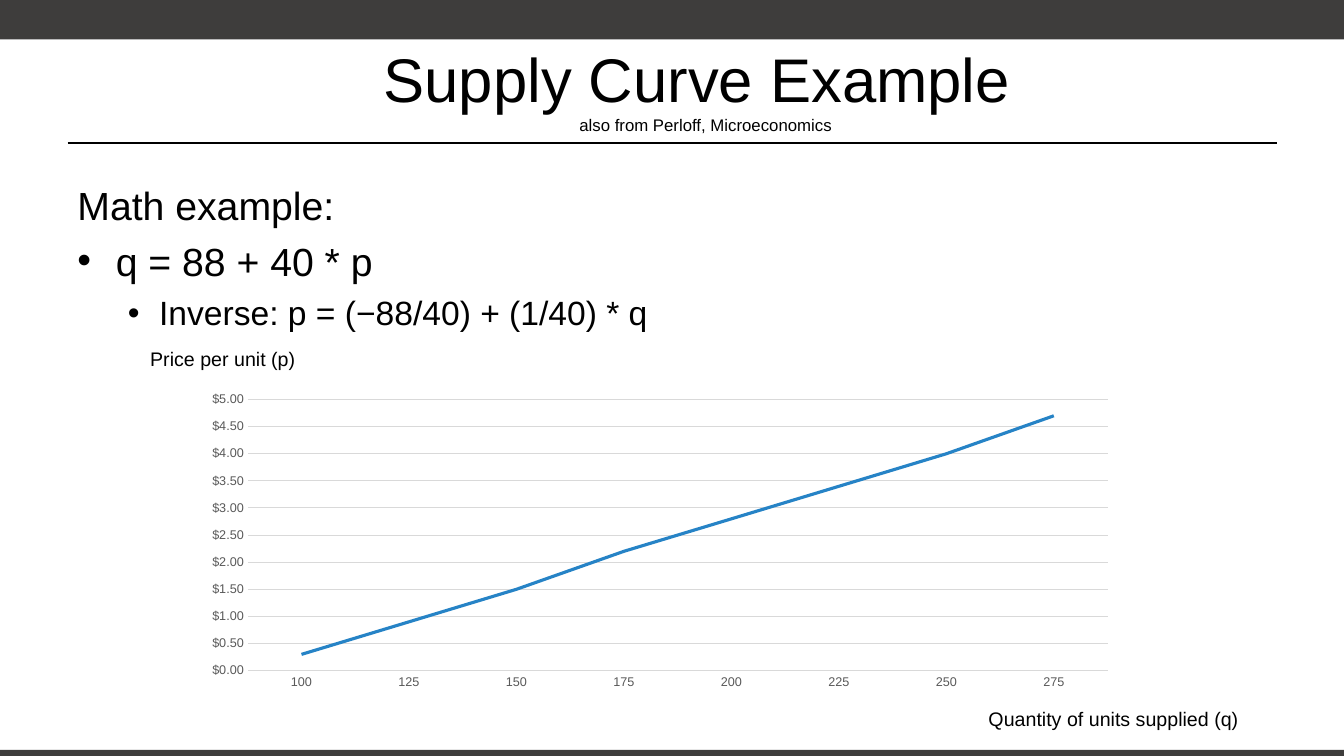
from dataclasses import dataclass

from lxml import etree
from pptx import Presentation
from pptx.chart.data import CategoryChartData
from pptx.dml.color import RGBColor
from pptx.enum.chart import XL_CHART_TYPE, XL_TICK_MARK
from pptx.enum.shapes import MSO_CONNECTOR, MSO_SHAPE
from pptx.enum.text import MSO_ANCHOR, PP_ALIGN
from pptx.oxml.ns import qn
from pptx.util import Pt

PX = 9144
FONT = "Arial"
BLACK = RGBColor(0, 0, 0)
WHITE = RGBColor(255, 255, 255)
DARK = RGBColor(0x3E, 0x3D, 0x3C)
GREY = RGBColor(0x59, 0x59, 0x59)
PALE = RGBColor(0xD9, 0xD9, 0xD9)
BLUE = RGBColor(0x26, 0x83, 0xC6)
LINE = XL_CHART_TYPE.LINE
NO_TICK = XL_TICK_MARK.NONE
RECT = MSO_SHAPE.RECTANGLE
STRAIGHT = MSO_CONNECTOR.STRAIGHT
TOP, MIDDLE = MSO_ANCHOR.TOP, MSO_ANCHOR.MIDDLE
LEFT, CENTER = PP_ALIGN.LEFT, PP_ALIGN.CENTER


@dataclass(frozen=True)
class Box:
    """A place on the slide in px, 100 to the inch."""
    left: int
    top: int
    width: int
    height: int

    def emu(self) -> tuple[int, ...]:
        """Return the place in EMU."""
        return tuple(n * PX for n in (self.left, self.top, self.width, self.height))


@dataclass(frozen=True)
class Run:
    """Words in one size."""
    words: str
    size: int


@dataclass(frozen=True)
class Para:
    """A paragraph of runs, one to a line, with an optional bullet."""
    runs: tuple[Run, ...]
    before: int = 0
    level: int = 0
    margin: int = 0
    hang: int = 0


@dataclass(frozen=True)
class Text:
    """A text box."""
    box: Box
    paras: tuple[Para, ...]
    align: PP_ALIGN = CENTER
    anchor: MSO_ANCHOR = TOP
    wrap: bool = True


BARS = (Box(0, 0, 1333, 39), Box(0, 744, 1333, 6))
RULE = Box(67, 142, 1200, 0)
CHART = Box(192, 383, 925, 307)
UNITS = range(100, 300, 25)
PRICES = (0.3, 0.9, 1.5, 2.2, 2.8, 3.4, 4, 4.7)
TEXTS = (
    Text(Box(67, 175, 1200, 150), (
        Para((Run("Math example:", 28),), 6),
        Para((Run("q = 88 + 40 * p", 28),), 6, 0, 38, 38),
        Para((Run("Inverse: p = (−88/40) + (1/40) * q", 24),), 6, 1, 81, 31),
    ), LEFT),
    Text(Box(67, 25, 1266, 125), (
        Para((Run("Supply Curve Example ", 44),
              Run("also from Perloff, Microeconomics", 12))),
    ), anchor=MIDDLE),
    Text(Box(125, 339, 192, 40), (Para((Run("Price per unit (p)", 14),)),)),
    Text(Box(967, 696, 275, 40),
         (Para((Run("Quantity of units supplied (q)", 14),)),), wrap=False),
)


def style(font, size: int, color: RGBColor) -> None:
    """Set the face, size and colour of a font."""
    font.name = FONT
    font.size = Pt(size)
    font.color.rgb = color


def add_bar(slide, box: Box) -> None:
    """Draw a dark bar."""
    bar = slide.shapes.add_shape(RECT, *box.emu())
    bar.shadow.inherit = False
    bar.fill.solid()
    bar.fill.fore_color.rgb = DARK
    bar.line.fill.background()


def add_rule(slide, box: Box) -> None:
    """Draw the line below the title."""
    left, top, width, height = box.emu()
    rule = slide.shapes.add_connector(STRAIGHT, left, top, left + width, top + height)
    rule.line.color.rgb = BLACK
    rule.line.width = Pt(1.25)
    etree.SubElement(rule._element.spPr, qn("a:effectLst"))


def add_bullet(line, para: Para) -> None:
    """Give a paragraph a hanging bullet."""
    props = line._p.get_or_add_pPr()
    props.set("marL", str(para.margin * PX))
    props.set("indent", str(-para.hang * PX))
    etree.SubElement(props, qn("a:buFont"), typeface=FONT)
    etree.SubElement(props, qn("a:buChar"), char="•")


def add_text(slide, text: Text) -> None:
    """Draw a text box run by run."""
    frame = slide.shapes.add_textbox(*text.box.emu()).text_frame
    frame.word_wrap = text.wrap
    frame.vertical_anchor = text.anchor
    for i, para in enumerate(text.paras):
        line = frame.add_paragraph() if i else frame.paragraphs[0]
        line.alignment = text.align
        line.level = para.level
        line.space_before = Pt(para.before)
        if para.hang:
            add_bullet(line, para)
        for j, part in enumerate(para.runs):
            if j:
                line.add_line_break()
            run = line.add_run()
            run.text = part.words
            style(run.font, part.size, BLACK)


def add_graph(slide, box: Box) -> None:
    """Draw the supply curve."""
    data = CategoryChartData()
    data.categories = [str(q) for q in UNITS]
    data.add_series("Series 1", PRICES)
    chart = slide.shapes.add_chart(LINE, *box.emu(), data).chart
    chart.has_legend = False
    chart.has_title = False
    style(chart.font, 10, BLACK)
    plot = chart.plots[0]
    plot.vary_by_categories = False
    curve = plot.series[0]
    curve.smooth = False
    curve.format.line.color.rgb = BLUE
    curve.format.line.width = Pt(2.25)
    units, price = chart.category_axis, chart.value_axis
    for axis in (units, price):
        axis.major_tick_mark = axis.minor_tick_mark = NO_TICK
        style(axis.tick_labels.font, 9, GREY)
    price.minimum_scale, price.maximum_scale, price.major_unit = 0, 5, 0.5
    price.tick_labels.number_format = '"$"#,##0.00'
    price.tick_labels.number_format_is_linked = False
    price.format.line.fill.background()
    price.has_major_gridlines = True
    for edge in (units.format.line, price.major_gridlines.format.line):
        edge.color.rgb = PALE
        edge.width = Pt(0.75)


def main() -> None:
    """Build the slide and save it."""
    deck = Presentation()
    deck.slide_width, deck.slide_height = 1333 * PX, 750 * PX
    slide = deck.slides.add_slide(deck.slide_layouts[6])
    slide.background.fill.solid()
    slide.background.fill.fore_color.rgb = WHITE
    for bar in BARS:
        add_bar(slide, bar)
    add_rule(slide, RULE)
    for text in TEXTS:
        add_text(slide, text)
    add_graph(slide, CHART)
    deck.save("out.pptx")


if __name__ == "__main__":
    main()
